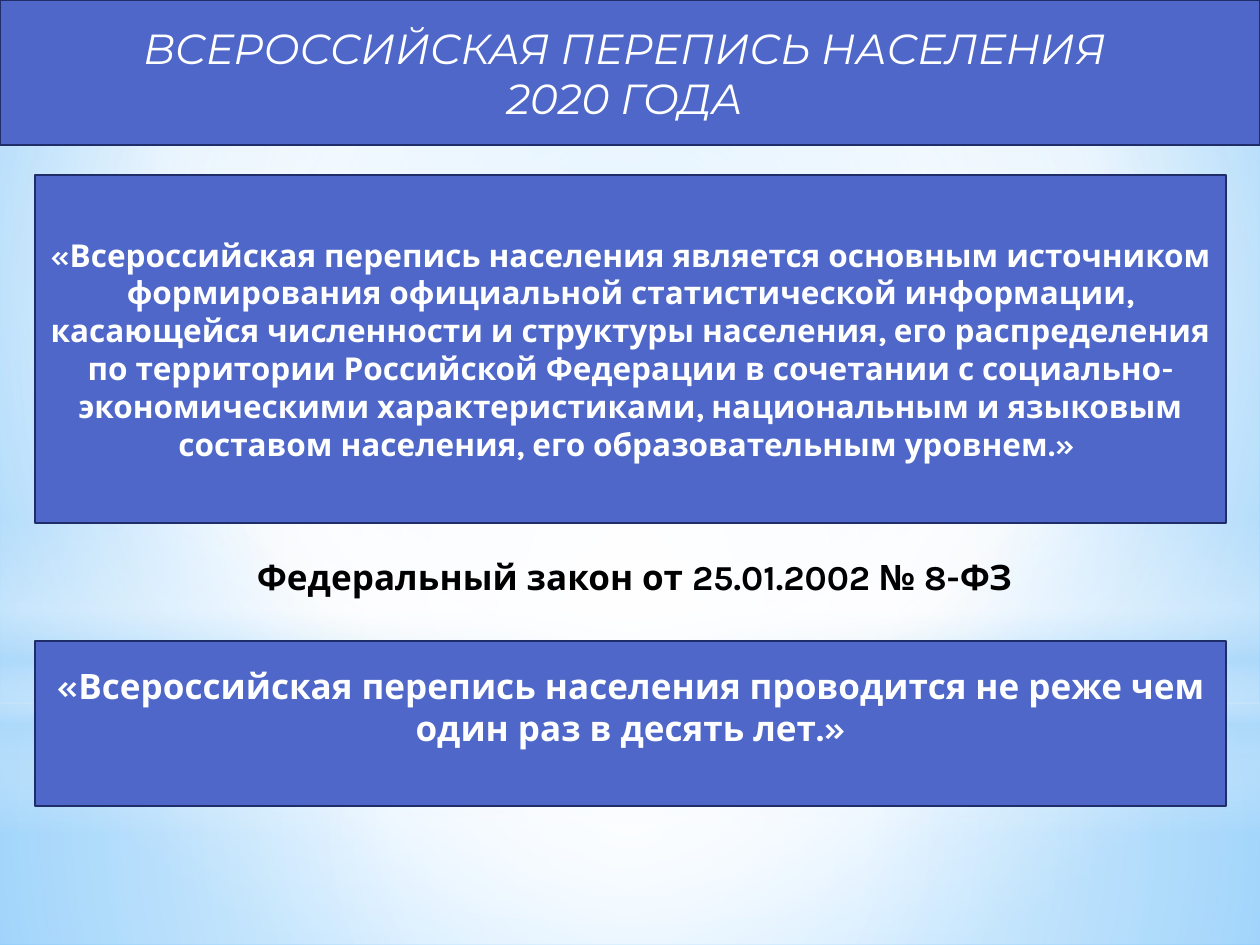
from lxml.etree import SubElement
from pptx import Presentation
from pptx.dml.color import RGBColor
from pptx.enum.shapes import MSO_SHAPE
from pptx.enum.text import MSO_ANCHOR, PP_ALIGN
from pptx.oxml.ns import qn
from pptx.util import Inches, Pt

COLORS = {
    "panel": "4E67C8",
    "border": "1F2E69",
    "white": "FFFFFF",
    "black": "000000",
    "haze": "B4DCFA",
    "sky": "9ED5FF",
    "deep_sky": "5BB9FF",
}


def apply_gradient(fill, owner, stops, focus=None):
    """Stops are (position, colour, opacity) in percent; without a focus the gradient runs downwards."""
    fill.gradient()
    gradient = owner.find(".//" + qn("a:gradFill"))
    for child in list(gradient):
        gradient.remove(child)
    stop_list = SubElement(gradient, qn("a:gsLst"))
    for position, color, opacity in stops:
        stop = SubElement(stop_list, qn("a:gs"), pos=str(position * 1000))
        rgb = SubElement(stop, qn("a:srgbClr"), val=COLORS[color])
        SubElement(rgb, qn("a:alpha"), val=str(opacity * 1000))
    if focus:
        radial = SubElement(gradient, qn("a:path"))
        radial.set("path", "circle")
        sides = {side: str(value * 1000) for side, value in zip("ltrb", focus)}
        SubElement(radial, qn("a:fillToRect"), **sides)
    else:
        SubElement(gradient, qn("a:lin"), ang="5400000", scaled="0")


def write_text(frame, lines, font_name, size, color, bold=False, italic=False):
    frame.word_wrap = True
    frame.text = "\n".join(lines)
    for paragraph in frame.paragraphs:
        paragraph.alignment = PP_ALIGN.CENTER
        for run in paragraph.runs:
            run.font.name = font_name
            run.font.size = Pt(size)
            run.font.bold = bold
            run.font.italic = italic
            run.font.color.rgb = RGBColor.from_string(COLORS[color])


prs = Presentation()
prs.slide_width, prs.slide_height = Inches(10), Inches(7.5)
slide = prs.slides.add_slide(prs.slide_layouts[5])

# Sky background with soft light
apply_gradient(
    slide.background.fill, slide.element,
    [(0, "sky", 100), (60, "white", 100), (100, "deep_sky", 100)],
    (20, 10, 20, 60),
)
CENTER = (50, 50, 50, 50)
glows = [
    (MSO_SHAPE.RECTANGLE, 5.58, 1.92, CENTER,
     [(0, "white", 91), (37, "white", 76), (100, "haze", 79)]),
    (MSO_SHAPE.RECTANGLE, 0, 5.58, CENTER,
     [(0, "white", 89), (48, "white", 62), (100, "haze", 79)]),
    (MSO_SHAPE.RECTANGLE, 4.12, 2.5, None,
     [(0, "white", 0), (29, "white", 30), (45, "haze", 40),
      (55, "white", 26), (65, "haze", 60), (100, "white", 0)]),
    (MSO_SHAPE.OVAL, 1.75, 5.58, CENTER,
     [(0, "white", 100), (56, "white", 0)]),
]
for outline, top, height, focus, stops in glows:
    glow = slide.shapes.add_shape(outline, 0, Inches(top), prs.slide_width, Inches(height))
    glow.shadow.inherit = False
    glow.line.fill.background()
    apply_gradient(glow.fill, glow.element, stops, focus)

# Law reference
law = slide.shapes.add_textbox(Inches(0.35), Inches(4.36), Inches(9.37), Inches(0.44))
write_text(law.text_frame, ["Федеральный закон от 25.01.2002 № 8-ФЗ"], "Karla", 20, "black", bold=True)

# Title band, raised above the background light
title = slide.shapes.title
slide.shapes.element.append(title.element)
title.left, title.top, title.width, title.height = 0, 0, prs.slide_width, Inches(1.15)
write_text(
    title.text_frame,
    ["ВСЕРОССИЙСКАЯ ПЕРЕПИСЬ НАСЕЛЕНИЯ ", "2020 ГОДА "],
    "Montserrat", 24, "white", italic=True,
)

# Quotations from the law
quotes = [
    (1.39, 2.76, 18, 0.05,
     "«Всероссийская перепись населения является основным источником формирования "
     "официальной статистической информации, касающейся численности и структуры населения, "
     "его распределения по территории Российской Федерации в сочетании с "
     "социально-экономическими характеристиками, национальным и языковым составом населения, "
     "его образовательным уровнем.» "),
    (5.09, 1.31, 20, 0.33,
     "«Всероссийская перепись населения проводится не реже чем один раз в десять лет.»"),
]
panels = [title]
for top, height, size, bottom_margin, quote in quotes:
    panel = slide.shapes.add_shape(
        MSO_SHAPE.RECTANGLE, Inches(0.28), Inches(top), Inches(9.45), Inches(height))
    panel.shadow.inherit = False
    panel.text_frame.margin_bottom = Inches(bottom_margin)
    write_text(panel.text_frame, [quote], "Karla", size, "white", bold=True)
    panels.append(panel)

for panel in panels:
    panel.fill.solid()
    panel.fill.fore_color.rgb = RGBColor.from_string(COLORS["panel"])
    panel.line.color.rgb = RGBColor.from_string(COLORS["border"])
    panel.line.width = Pt(1.25)
    panel.text_frame.vertical_anchor = MSO_ANCHOR.MIDDLE

prs.save("out.pptx")
